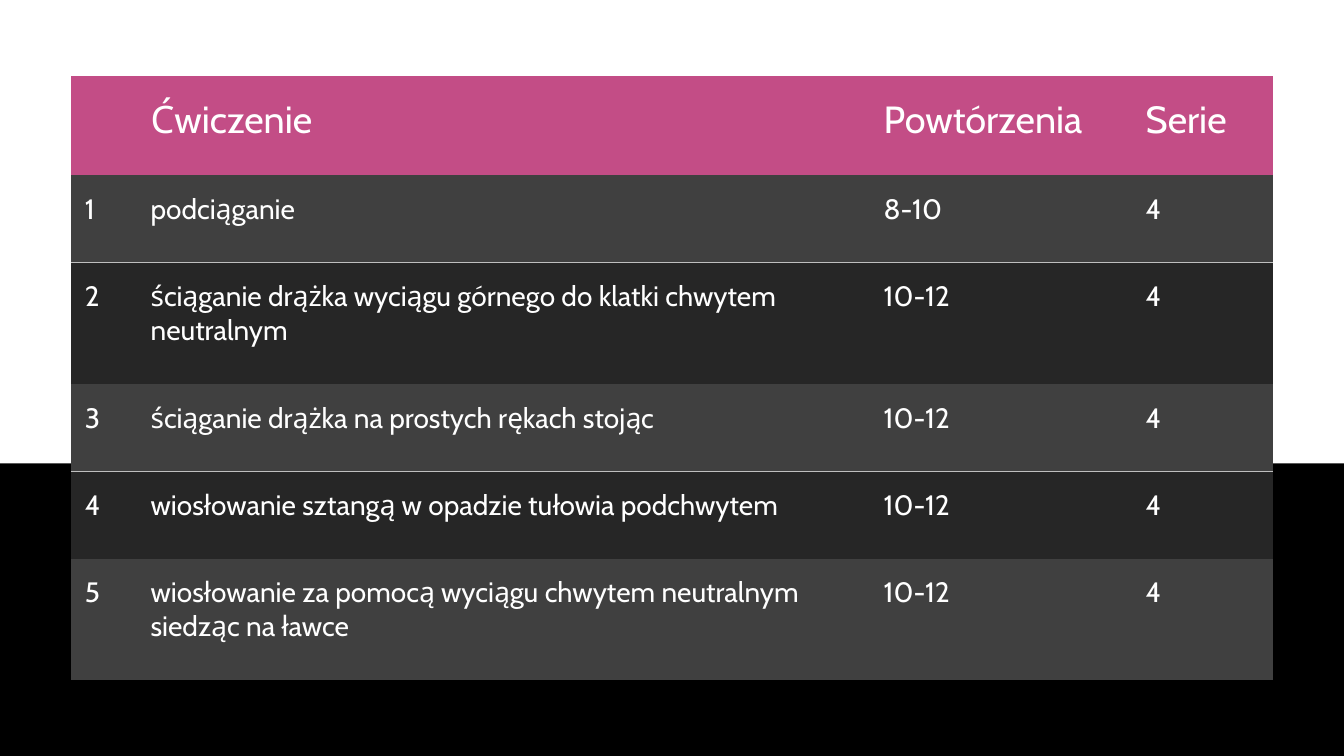
from lxml.etree import SubElement
from pptx import Presentation
from pptx.dml.color import RGBColor
from pptx.enum.shapes import MSO_SHAPE
from pptx.enum.text import MSO_ANCHOR
from pptx.oxml.ns import qn
from pptx.util import Pt

SLIDE_WIDTH, SLIDE_HEIGHT = 960, 540
COLUMN_WIDTHS = [47, 523.6, 187.2, 101]
HEADER_HEIGHT, SINGLE_HEIGHT, DOUBLE_HEIGHT = 70.6, 62.4, 86.9
WHITE, BLACK, PINK, RULE_GREY = "FFFFFF", "000000", "C34D86", "BFBFBF"
BAND_COLORS = ["404040", "262626"]
RULED_ROWS = [1, 3]  # rows with a grey line beneath them
CELL_FORMAT = {
    "margin_left": Pt(10),
    "margin_right": Pt(10),
    "margin_top": Pt(12.2),
    "margin_bottom": Pt(20.2),
}
HEADINGS = ["", "Ćwiczenie", "Powtórzenia", "Serie"]
EXERCISES = [
    ("podciąganie", "8-10", SINGLE_HEIGHT),
    ("ściąganie drążka wyciągu górnego do klatki chwytem neutralnym", "10-12", DOUBLE_HEIGHT),
    ("ściąganie drążka na prostych rękach stojąc", "10-12", SINGLE_HEIGHT),
    ("wiosłowanie sztangą w opadzie tułowia podchwytem", "10-12", SINGLE_HEIGHT),
    ("wiosłowanie za pomocą wyciągu chwytem neutralnym siedząc na ławce", "10-12", DOUBLE_HEIGHT),
]
SETS = "4"


def paint(fill, color):
    fill.solid()
    fill.fore_color.rgb = RGBColor.from_string(color)


def set_borders(cell, colors):
    """Draw the sides named in colors and clear the others; call before filling the cell."""
    properties = cell._tc.get_or_add_tcPr()
    for side in "LRTB":
        line = SubElement(properties, qn(f"a:ln{side}"), w=str(Pt(1)))
        if side in colors:
            solid = SubElement(line, qn("a:solidFill"))
            SubElement(solid, qn("a:srgbClr"), val=colors[side])
        else:
            SubElement(line, qn("a:noFill"))


def format_cell(cell, text, size, anchor, color, borders):
    for name, value in CELL_FORMAT.items():
        setattr(cell, name, value)
    cell.vertical_anchor = anchor
    set_borders(cell, borders)
    paint(cell.fill, color)
    cell.text = text
    font = cell.text_frame.paragraphs[0].font
    for name, value in {"name": "Cabin", "size": Pt(size), "bold": False}.items():
        setattr(font, name, value)
    font.color.rgb = RGBColor.from_string(WHITE)


def add_floor(slide, left, top, width, height):
    floor = slide.shapes.add_shape(
        MSO_SHAPE.RECTANGLE, Pt(left), Pt(top), Pt(width), Pt(height))
    floor.shadow.inherit = False
    paint(floor.fill, BLACK)
    floor.line.fill.background()


def add_exercise_table(slide, left, top):
    rows = [HEADINGS] + [
        [str(number), exercise, repetitions, SETS]
        for number, (exercise, repetitions, _) in enumerate(EXERCISES, 1)]
    heights = [HEADER_HEIGHT] + [height for _, _, height in EXERCISES]
    table = slide.shapes.add_table(
        len(rows), len(COLUMN_WIDTHS), Pt(left), Pt(top),
        Pt(sum(COLUMN_WIDTHS)), Pt(sum(heights))).table
    table.first_row = table.horz_banding = False
    for column, width in zip(table.columns, COLUMN_WIDTHS):
        column.width = Pt(width)
    for row_index, (texts, height) in enumerate(zip(rows, heights)):
        table.rows[row_index].height = Pt(height)
        borders = {}
        if row_index in RULED_ROWS:
            borders["B"] = RULE_GREY
        if row_index - 1 in RULED_ROWS:
            borders["T"] = RULE_GREY
        if row_index == 0:
            size, anchor, color = 27, MSO_ANCHOR.MIDDLE, PINK
        else:
            size, anchor, color = 20, MSO_ANCHOR.TOP, BAND_COLORS[(row_index - 1) % 2]
        for column_index, text in enumerate(texts):
            format_cell(table.cell(row_index, column_index), text, size, anchor, color, borders)


def main():
    presentation = Presentation()
    presentation.slide_width = Pt(SLIDE_WIDTH)
    presentation.slide_height = Pt(SLIDE_HEIGHT)
    slide = presentation.slides.add_slide(presentation.slide_layouts[6])
    paint(slide.background.fill, WHITE)
    floor_top = 331
    add_floor(slide, 0, floor_top, SLIDE_WIDTH, SLIDE_HEIGHT - floor_top)
    add_exercise_table(slide, 50.6, 54.4)
    presentation.save("out.pptx")


if __name__ == "__main__":
    main()
